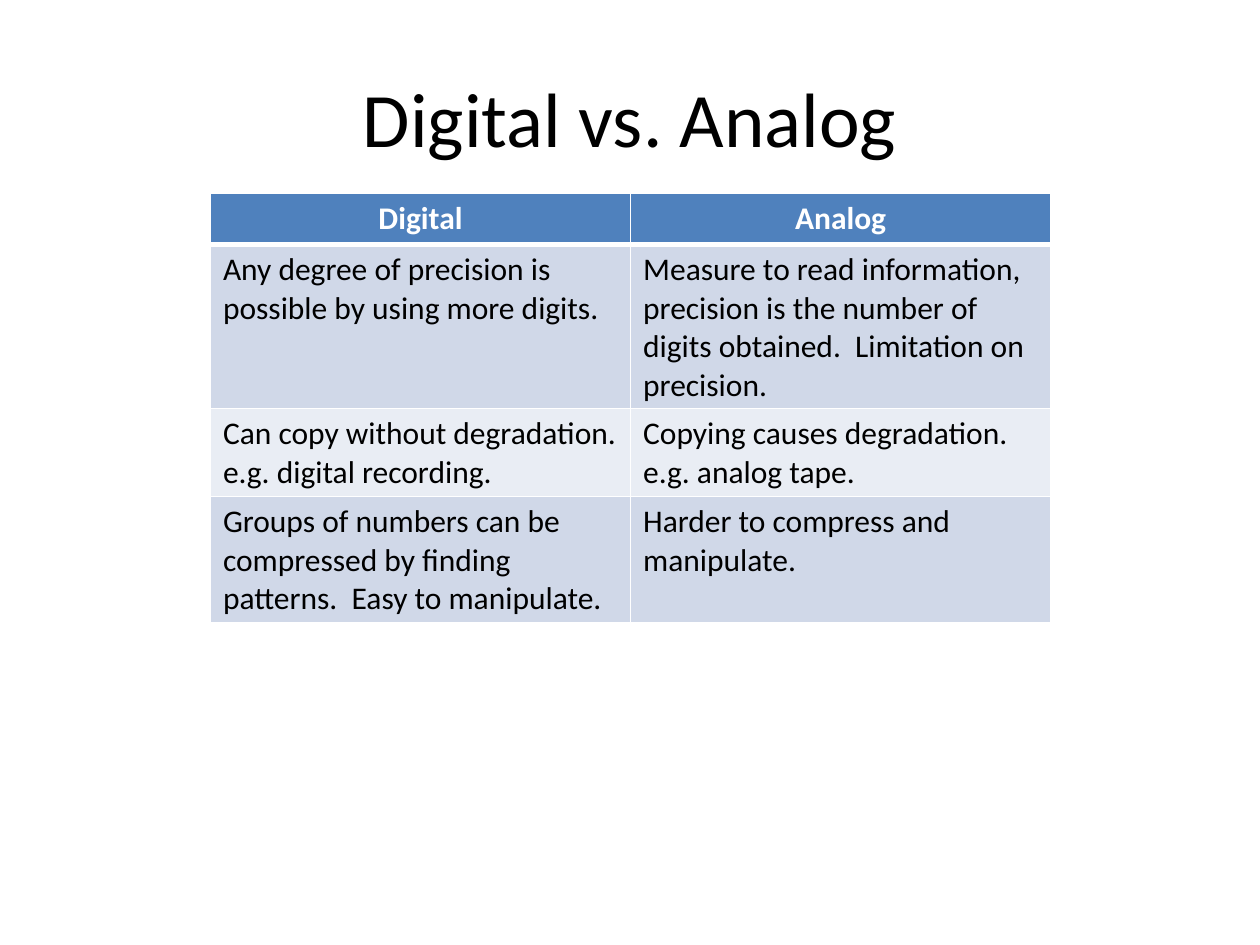
from pptx import Presentation
from pptx.dml.color import RGBColor
from pptx.enum.text import MSO_ANCHOR, PP_ALIGN
from pptx.oxml import parse_xml
from pptx.oxml.ns import nsdecls
from pptx.util import Inches, Pt

COLORS = {
    "text": "000000",
    "header_text": "FFFFFF",
    "header": "4F81BD",
    "odd_row": "D0D8E8",
    "even_row": "E9EDF4",
    "border": "FFFFFF",
}
FONT = "Calibri"
ROWS = [
    ("Digital", "Analog"),
    ("Any degree of precision is possible by using more digits.",
     "Measure to read information, precision is the number of digits obtained.  "
     "Limitation on precision."),
    ("Can copy without degradation.\ne.g. digital recording.",
     "Copying causes degradation.\ne.g. analog tape."),
    ("Groups of numbers can be compressed by finding patterns.  Easy to manipulate.",
     "Harder to compress and manipulate."),
]
ROW_HEIGHTS = [0.41, 1.3, 0.7, 1.0]


def style_paragraphs(frame, size, color, bold=False, align=PP_ALIGN.LEFT):
    for para in frame.paragraphs:
        para.alignment = align
        para.font.name = FONT
        para.font.size = Pt(size)
        para.font.bold = bold
        para.font.color.rgb = RGBColor.from_string(COLORS[color])


def set_borders(cell, top, bottom):
    """Draw the four cell borders; top and bottom are widths in points."""
    properties = cell._tc.get_or_add_tcPr()
    widths = {"lnL": 1, "lnR": 1, "lnT": top, "lnB": bottom}
    for index, (side, width) in enumerate(widths.items()):
        properties.insert(index, parse_xml(
            f'<a:{side} {nsdecls("a")} w="{Pt(width)}"><a:solidFill>'
            f'<a:srgbClr val="{COLORS["border"]}"/></a:solidFill></a:{side}>'))


def add_title(page, left, top, width, height):
    box = page.shapes.add_textbox(left, top, width, height)
    frame = box.text_frame
    frame.word_wrap = True
    frame.vertical_anchor = MSO_ANCHOR.MIDDLE
    frame.text = "Digital vs. Analog"
    style_paragraphs(frame, 44, "text", align=PP_ALIGN.CENTER)


def add_comparison_table(page, left, top, width, height):
    table = page.shapes.add_table(len(ROWS), len(ROWS[0]), left, top, width, height).table
    for row_index, texts in enumerate(ROWS):
        table.rows[row_index].height = Inches(ROW_HEIGHTS[row_index])
        is_header = row_index == 0
        fill = "header" if is_header else "odd_row" if row_index % 2 else "even_row"
        for column_index, text in enumerate(texts):
            cell = table.cell(row_index, column_index)
            cell.text = text
            cell.fill.solid()
            cell.fill.fore_color.rgb = RGBColor.from_string(COLORS[fill])
            set_borders(cell, top=3 if row_index == 1 else 1, bottom=3 if is_header else 1)
            if is_header:
                style_paragraphs(cell.text_frame, 18, "header_text", True, PP_ALIGN.CENTER)
            else:
                style_paragraphs(cell.text_frame, 18, "text")


def main():
    deck = Presentation()
    deck.slide_width, deck.slide_height = Inches(10), Inches(7.5)
    page = deck.slides.add_slide(deck.slide_layouts[6])
    add_title(page, Inches(0.5), Inches(0.3), Inches(9), Inches(1.25))
    add_comparison_table(page, Inches(1.67), Inches(1.53), Inches(6.67),
                         Inches(sum(ROW_HEIGHTS)))
    deck.save("out.pptx")


if __name__ == "__main__":
    main()
